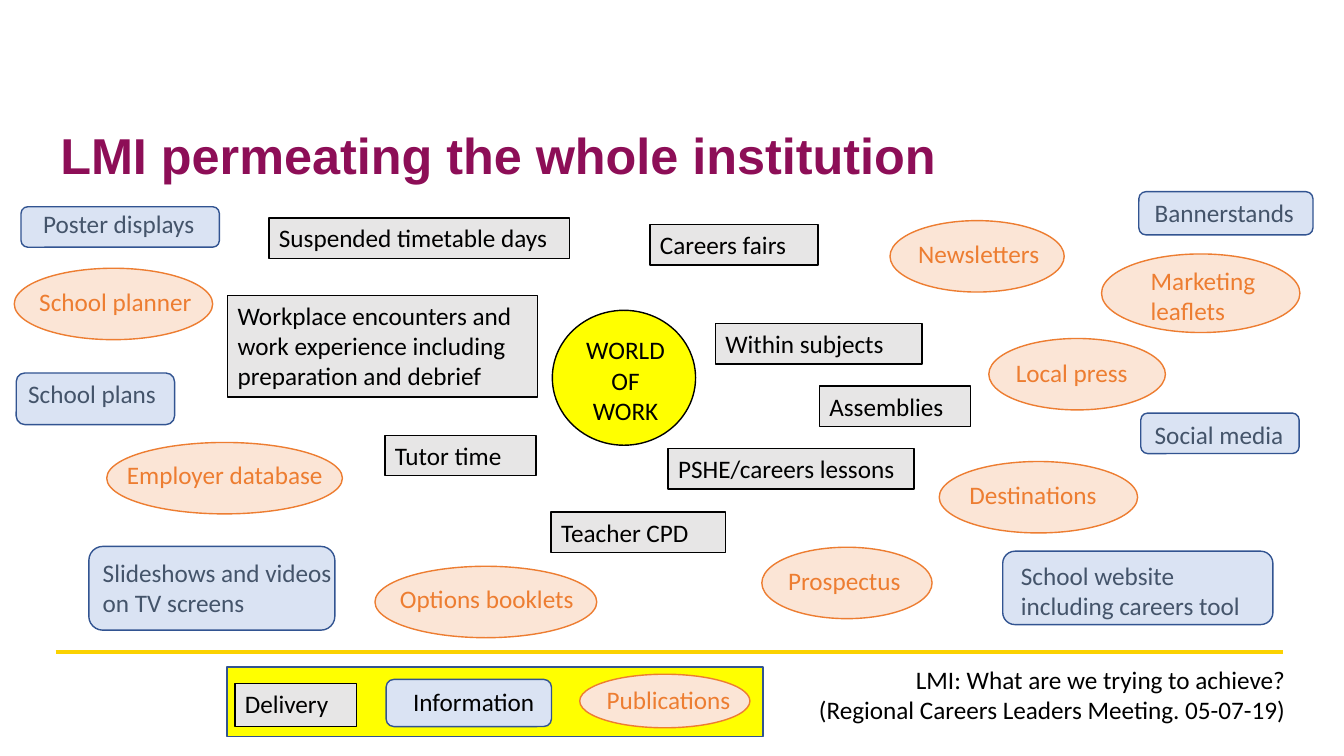
from dataclasses import dataclass

from lxml import etree
from pptx import Presentation
from pptx.dml.color import RGBColor
from pptx.enum.shapes import MSO_CONNECTOR, MSO_SHAPE
from pptx.enum.text import MSO_ANCHOR, PP_ALIGN
from pptx.oxml.ns import qn
from pptx.util import Cm, Pt

RECTANGLE = MSO_SHAPE.RECTANGLE
ROUNDED = MSO_SHAPE.ROUNDED_RECTANGLE
OVAL = MSO_SHAPE.OVAL
STRAIGHT = MSO_CONNECTOR.STRAIGHT
LEFT, CENTER, RIGHT = PP_ALIGN.LEFT, PP_ALIGN.CENTER, PP_ALIGN.RIGHT
TOP, MIDDLE = MSO_ANCHOR.TOP, MSO_ANCHOR.MIDDLE


@dataclass(frozen=True)
class Theme:
    black: str = "000000"
    yellow: str = "FFFF00"
    gold: str = "FBD201"
    plum: str = "8D0E57"
    grey: str = "E7E6E6"
    pale_blue: str = "DAE3F3"
    blue: str = "325491"
    slate: str = "44546A"
    peach: str = "FBE5D6"
    orange: str = "ED7D31"
    body_font: str = "Calibri"
    title_font: str = "Arial"
    body_size: int = 18
    title_size: int = 36
    outline: int = 1
    rule: int = 3


THEME = Theme()

# Boxes are left, top, width, height in centimetres.
DELIVERY = [
    ("Suspended timetable days", (6.78, 5.49, 7.57, 1.02)),
    ("Within subjects", (18.03, 8.15, 5.21, 1.02)),
    ("Assemblies", (20.65, 9.73, 3.81, 1.02)),
    ("Tutor time", (9.7, 10.97, 3.81, 1.02)),
    ("PSHE/careers lessons", (16.84, 11.3, 6.2, 1.02)),
    ("Teacher CPD", (13.89, 12.9, 4.39, 1.02)),
    ("Careers fairs", (16.38, 5.66, 4.24, 1.02)),
    ("Workplace encounters and work experience including preparation and debrief",
     (5.74, 7.44, 7.8, 2.57)),
]
# Label, outline box, text box
INFORMATION = [
    ("Slideshows and videos on TV screens",
     (2.24, 13.77, 6.2, 2.11), (2.34, 13.92, 6.3, 1.8)),
    ("School website including careers tool",
     (25.27, 13.89, 6.81, 1.85), (25.48, 14, 6.73, 1.8)),
    ("Poster displays", (0.53, 5.21, 5, 1.02), (0.84, 5.13, 4.9, 1.02)),
    ("Social media", (28.75, 10.41, 3.99, 1.02), (28.85, 10.44, 3.91, 1.02)),
    ("Bannerstands", (28.7, 4.83, 4.39, 1.09), (28.85, 4.85, 4.29, 1.02)),
    ("School plans", (0.41, 9.4, 3.99, 1.3), (0.46, 9.42, 4.29, 1.02)),
]
PUBLICATIONS = [
    ("School planner", (0.36, 6.76, 5, 1.8), (0.74, 7.09, 4.8, 1.02)),
    ("Prospectus", (19.2, 13.79, 4.29, 1.8), (19.61, 14.12, 4.8, 1.02)),
    ("Options booklets", (9.45, 14.27, 5.59, 1.8), (9.83, 14.58, 5.21, 1.02)),
    ("Destinations", (23.67, 11.63, 5, 1.8), (24.18, 11.96, 4.8, 1.02)),
    ("Employer database", (2.69, 11.15, 5.94, 1.8), (2.95, 11.46, 5.49, 1.02)),
    ("Newsletters", (22.43, 5.56, 4.39, 1.8), (22.89, 5.89, 4.8, 1.02)),
    ("Marketing leaflets", (27.76, 6.4, 5, 1.98), (28.75, 6.55, 3.61, 1.8)),
    ("Local press", (24.92, 8.53, 4.45, 1.8), (25.35, 8.89, 3.45, 1.02)),
]


def write(shape, lines, color=THEME.black, align=LEFT, anchor=TOP,
          font=THEME.body_font, size=THEME.body_size, bold=False, spacing=1.0):
    frame = shape.text_frame
    frame.word_wrap = True
    frame.vertical_anchor = anchor
    font_values = {"name": font, "size": Pt(size), "bold": bold}
    for index, line in enumerate(lines):
        paragraph = frame.paragraphs[0] if index == 0 else frame.add_paragraph()
        paragraph.alignment = align
        paragraph.line_spacing = spacing
        run = paragraph.add_run()
        run.text = line
        for name, value in font_values.items():
            setattr(run.font, name, value)
        run.font.color.rgb = RGBColor.from_string(color)


def add_outline(shapes, kind, box, fill, line):
    shape = shapes.add_shape(kind, *map(Cm, box))
    shape.shadow.inherit = False
    shape.fill.solid()
    shape.fill.fore_color.rgb = RGBColor.from_string(fill)
    shape.line.color.rgb = RGBColor.from_string(line)
    shape.line.width = Pt(THEME.outline)
    return shape


def add_text(shapes, box, lines, **style):
    write(shapes.add_textbox(*map(Cm, box)), lines, **style)


def add_delivery(shapes, label, box):
    write(add_outline(shapes, RECTANGLE, box, THEME.grey, THEME.black), [label])


def add_information(shapes, label, box, text_box, color=THEME.slate):
    group = shapes.add_group_shape()
    add_outline(group.shapes, ROUNDED, box, THEME.pale_blue, THEME.blue)
    add_text(group.shapes, text_box, [label], color=color)


def add_publication(shapes, label, box, text_box):
    group = shapes.add_group_shape()
    add_outline(group.shapes, OVAL, box, THEME.peach, THEME.orange)
    add_text(group.shapes, text_box, [label], color=THEME.orange)


def add_world_of_work(shapes):
    group = shapes.add_group_shape()
    add_outline(group.shapes, OVAL, (13.92, 7.82, 3.61, 3.4), THEME.yellow, THEME.black)
    add_text(group.shapes, (13.16, 8.31, 5.21, 2.57), ["WORLD", "OF", "WORK"], align=CENTER)


def add_key(shapes):
    group = shapes.add_group_shape()
    add_outline(group.shapes, RECTANGLE, (5.72, 16.81, 13.51, 1.75), THEME.yellow, THEME.blue)
    add_delivery(group.shapes, "Delivery", (5.92, 17.22, 3.07, 1.09))
    add_publication(group.shapes, "Publications",
                    (14.61, 16.99, 4.29, 1.35), (15.04, 17.12, 3.86, 1.09))
    add_information(group.shapes, "Information",
                    (9.73, 17.12, 4.17, 1.19), (10.16, 17.17, 3.66, 1.09), THEME.black)


def add_rule(shapes, left, right, top):
    rule = shapes.add_connector(STRAIGHT, Cm(left), Cm(top), Cm(right), Cm(top))
    rule.line.color.rgb = RGBColor.from_string(THEME.gold)
    rule.line.width = Pt(THEME.rule)
    etree.SubElement(rule._element.spPr, qn("a:effectLst"))


def main():
    presentation = Presentation()
    presentation.slide_width, presentation.slide_height = Cm(33.87), Cm(19.05)
    shapes = presentation.slides.add_slide(presentation.slide_layouts[6]).shapes

    add_text(shapes, (1.27, 2.84, 31.34, 2.31), ["LMI permeating the whole institution"],
             color=THEME.plum, anchor=MIDDLE, font=THEME.title_font,
             size=THEME.title_size, bold=True, spacing=0.9)
    add_world_of_work(shapes)
    for item in DELIVERY:
        add_delivery(shapes, *item)
    for item in INFORMATION:
        add_information(shapes, *item)
    for item in PUBLICATIONS:
        add_publication(shapes, *item)
    add_key(shapes)
    add_text(shapes, (10.54, 16.61, 22.1, 1.8),
             ["LMI: What are we trying to achieve?",
              "(Regional Careers Leaders Meeting. 05-07-19)"], align=RIGHT)
    add_rule(shapes, 1.4, 32.33, 16.43)
    presentation.save("out.pptx")


if __name__ == "__main__":
    main()
